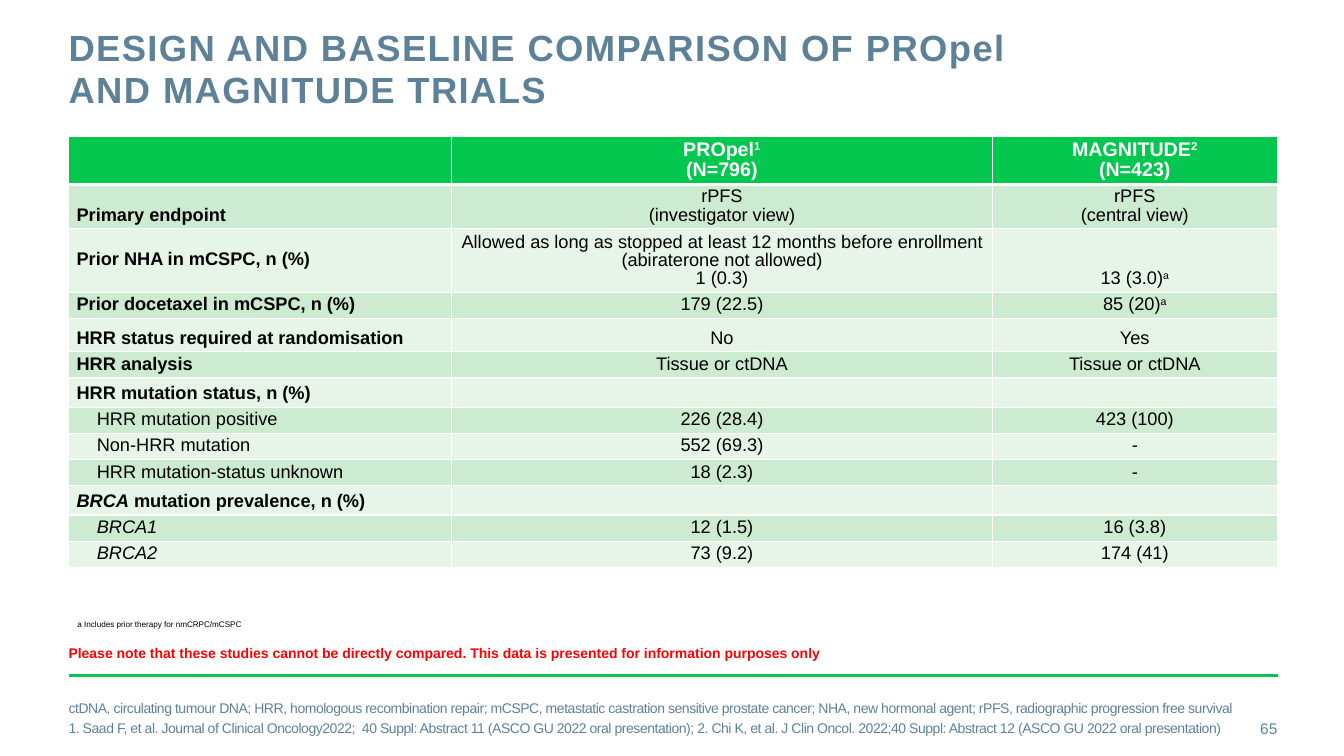
from lxml import etree
from pptx import Presentation
from pptx import util as u
from pptx.dml.color import RGBColor
from pptx.enum import shapes, text
from pptx.oxml.ns import qn

GREEN = RGBColor(0x03, 0xC7, 0x4F)
BAND_DARK = RGBColor(0xCC, 0xEB, 0xD0)
BAND_LIGHT = RGBColor(0xE7, 0xF5, 0xE9)
SLATE = RGBColor(0x5D, 0x82, 0x98)
RED = RGBColor(0xFF, 0x00, 0x00)
BLACK = RGBColor(0, 0, 0)
WHITE = RGBColor(0xFF, 0xFF, 0xFF)

LEFT, CENTER, RIGHT = text.PP_ALIGN.LEFT, text.PP_ALIGN.CENTER, text.PP_ALIGN.RIGHT
TOP, MIDDLE, BOTTOM = text.MSO_ANCHOR.TOP, text.MSO_ANCHOR.MIDDLE, text.MSO_ANCHOR.BOTTOM

COLUMN_WIDTHS = [3.8, 5.36, 2.83]
HEADINGS = ["", "PROpel|^1\n(N=796)", "MAGNITUDE|^2\n(N=423)"]
# Row height, kind of label, then the three cells.
# In a cell, | starts a new run, ^ raises it, _ makes it italic, \v breaks the line.
TRIAL_ROWS = [
    (0.44, "main", "Primary endpoint", "rPFS\v(investigator view)", "rPFS\v(central view)"),
    (0.63, "main", "Prior NHA in mCSPC, n (%)",
     "Allowed as long as stopped at least 12 months before enrollment\v"
     "(abiraterone not allowed)\n1 (0.3)", "13 (3.0)|^a"),
    (0.26, "main", "Prior docetaxel in mCSPC, n (%)", "179 (22.5)", "85 (20)|^a"),
    (0.33, "main", "HRR status required at randomisation", "No", "Yes"),
    (0.26, "main", "HRR analysis", "Tissue or ctDNA", "Tissue or ctDNA"),
    (0.28, "main", "HRR mutation status, n (%)", "", ""),
    (0.26, "sub", "HRR mutation positive", "226 (28.4)", "423 (100)"),
    (0.26, "sub", "Non-HRR mutation", "552 (69.3)", "-"),
    (0.26, "sub", "HRR mutation-status unknown", "18 (2.3)", "-"),
    (0.28, "main", "_BRCA| mutation prevalence, n (%)", "", ""),
    (0.26, "sub", "_BRCA1", "12 (1.5)", "16 (3.8)"),
    (0.26, "sub", "_BRCA2", "73 (9.2)", "174 (41)"),
]
HEADER_HEIGHT, CLOSING_HEIGHT = 0.48, 0.51


class TrialSlide:
    font = "Arial"

    def __init__(self, deck):
        self.slide = deck.slides.add_slide(deck.slide_layouts[6])

    def add_wording(self, frame, content, size, color, bold=False, align=LEFT,
                    line=None, before=0, spacing=0, indent=0):
        """Fill a text frame: one paragraph per line of content, run by run."""
        for number, wording in enumerate(content.split("\n")):
            para = frame.add_paragraph() if number else frame.paragraphs[0]
            para.alignment = align
            if line:
                para.line_spacing = line
            if before and number:
                para.space_before = u.Pt(before)
            if indent:
                para._p.get_or_add_pPr().set("marL", str(u.Inches(indent)))
            if not wording:
                etree.SubElement(para._p, qn("a:endParaRPr"), sz=str(size * 100))
                continue
            for piece in wording.split("|"):
                mark = piece[0] if piece[0] in "^_" else ""
                for order, words in enumerate(piece[len(mark):].split("\v")):
                    if order:
                        para.add_line_break()
                    run = para.add_run()
                    run.text = words
                    run.font.name = self.font
                    run.font.size = u.Pt(size)
                    run.font.bold = bold
                    run.font.italic = mark == "_"
                    run.font.color.rgb = color
                    props = run._r.get_or_add_rPr()
                    if mark == "^":
                        props.set("baseline", "30000")
                    if spacing:
                        props.set("spc", str(round(spacing * 100)))

    def text(self, box, content, size, color, anchor=TOP, insets=(0, 0, 0, 0), **style):
        frame = self.slide.shapes.add_textbox(*map(u.Inches, box)).text_frame
        frame.word_wrap = True
        frame.vertical_anchor = anchor
        (frame.margin_left, frame.margin_top,
         frame.margin_right, frame.margin_bottom) = map(u.Inches, insets)
        self.add_wording(frame, content, size, color, **style)

    def rule(self, x1, x2, y):
        rule = self.slide.shapes.add_connector(
            shapes.MSO_CONNECTOR.STRAIGHT, *map(u.Inches, (x1, y, x2, y)))
        rule.line.color.rgb = GREEN
        rule.line.width = u.Pt(2)
        etree.SubElement(rule._element.spPr, qn("a:effectLst"))

    def cell(self, cell, content, fill, size=13, color=BLACK, anchor=BOTTOM,
             bottom_border=1, top_border=1, **style):
        cell.margin_left = cell.margin_right = u.Inches(0.08)
        cell.margin_top, cell.margin_bottom = u.Inches(0.03), u.Inches(0.04)
        cell.vertical_anchor = anchor
        borders = {"a:lnL": 1, "a:lnR": 1, "a:lnT": top_border, "a:lnB": bottom_border}
        for side, width in borders.items():
            edge = etree.SubElement(cell._tc.get_or_add_tcPr(), qn(side), w=str(u.Pt(width)))
            paint = etree.SubElement(edge, qn("a:solidFill"))
            etree.SubElement(paint, qn("a:srgbClr"), val=str(WHITE))
        if fill is None:
            cell.fill.background()
        else:
            cell.fill.solid()
            cell.fill.fore_color.rgb = fill
        self.add_wording(cell.text_frame, content, size, color, line=0.9, **style)

    def trial_table(self, left, top):
        heights = [HEADER_HEIGHT, *(row[0] for row in TRIAL_ROWS), CLOSING_HEIGHT]
        table = self.slide.shapes.add_table(
            len(heights), len(COLUMN_WIDTHS), u.Inches(left), u.Inches(top),
            u.Inches(sum(COLUMN_WIDTHS)), u.Inches(sum(heights))).table
        table.first_row = table.horz_banding = False
        for column, width in zip(table.columns, COLUMN_WIDTHS):
            column.width = u.Inches(width)
        for row, height in zip(table.rows, heights):
            row.height = u.Inches(height)

        for col, heading in enumerate(HEADINGS):
            self.cell(table.cell(0, col), heading, GREEN, size=14, color=WHITE,
                      bold=True, align=CENTER, bottom_border=3)
        for number, (_, kind, label, *results) in enumerate(TRIAL_ROWS, 1):
            band = BAND_DARK if number % 2 else BAND_LIGHT
            top_border = 3 if number == 1 else 1
            self.cell(table.cell(number, 0), label, band, bold=kind == "main",
                      indent=0.2 if kind == "sub" else 0, top_border=top_border,
                      anchor=MIDDLE if "NHA" in label else BOTTOM)
            for col, result in enumerate(results, 1):
                self.cell(table.cell(number, col), result, band, align=CENTER,
                          top_border=top_border)
        closing = len(heights) - 1
        for col in range(len(COLUMN_WIDTHS)):
            self.cell(table.cell(closing, col), "", None)
        table.cell(closing, 0).merge(table.cell(closing, len(COLUMN_WIDTHS) - 1))


def main():
    deck = Presentation()
    deck.slide_width, deck.slide_height = u.Inches(13.33), u.Inches(7.5)
    page = TrialSlide(deck)
    page.rule(0.68, 12.68, 6.7)
    page.trial_table(0.68, 1.35)
    page.text((0.68, 0.27, 9.56, 0.88),
              "DESIGN AND BASELINE COMPARISON OF PROpel AND MAGNITUDE TRIALS",
              26, SLATE, bold=True, line=u.Pt(30), spacing=1)
    page.text((0.68, 6.92, 11.72, 0.4),
              "ctDNA, circulating tumour DNA; HRR, homologous recombination repair; "
              "mCSPC, metastatic castration sensitive prostate cancer; "
              "NHA, new hormonal agent; rPFS, radiographic progression free survival\n"
              "1. Saad F, et al. Journal of Clinical Oncology2022;  40 Suppl: Abstract 11 "
              "(ASCO GU 2022 oral presentation); 2. Chi K, et al. J Clin Oncol. "
              "2022;40 Suppl: Abstract 12 (ASCO GU 2022 oral presentation)",
              10, SLATE, anchor=MIDDLE, before=2, spacing=-0.3)
    page.text((0.68, 6.34, 12.22, 0.27),
              "Please note that these studies cannot be directly compared. "
              "This data is presented for information purposes only",
              10, RED, insets=(0, 0.05, 0.1, 0.05), bold=True)
    page.text((11.81, 7.03, 0.86, 0.4), "65", 11, SLATE, anchor=MIDDLE, align=RIGHT)
    page.text((0.67, 5.86, 12.01, 0.48), "^a Includes prior therapy for nmCRPC/mCSPC",
              10, BLACK, anchor=BOTTOM, insets=(0.1, 0.05, 0.1, 0.05))
    deck.save("out.pptx")


if __name__ == "__main__":
    main()
